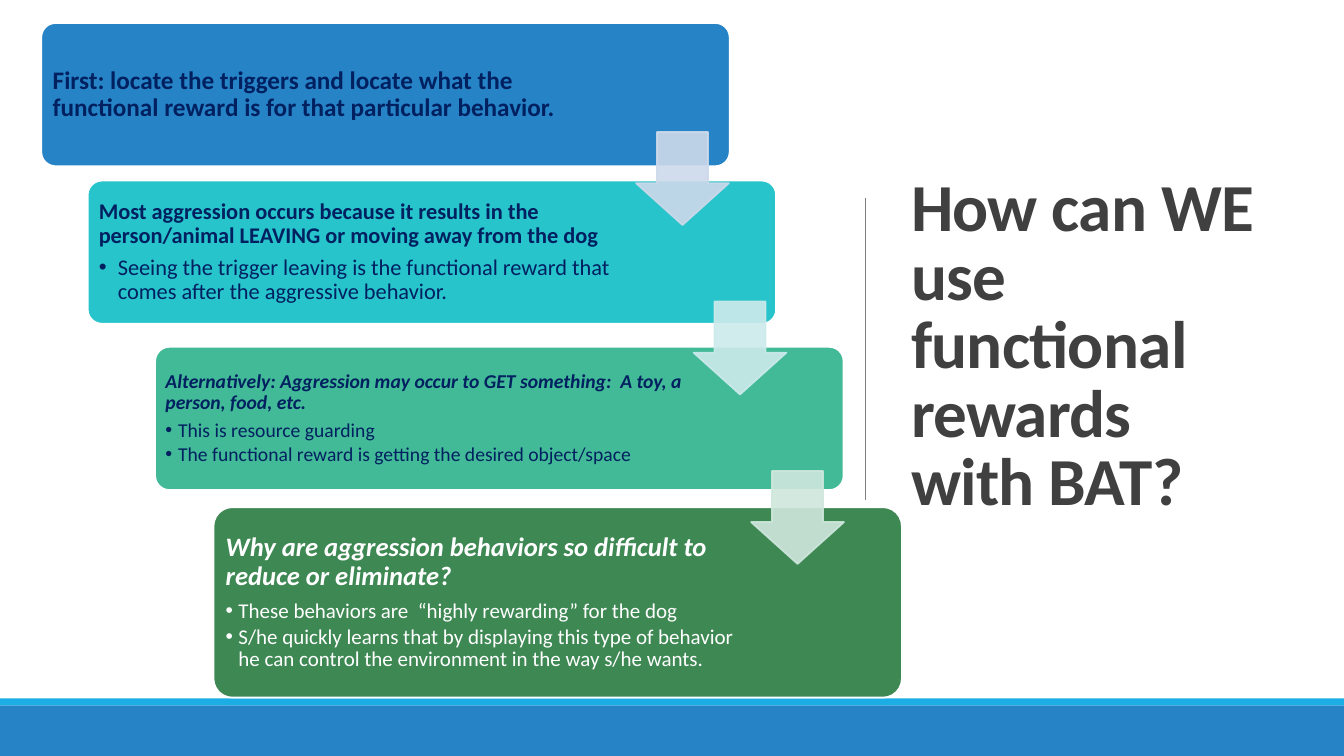
import pptx
import pptx.dml.color
import pptx.enum.shapes
import pptx.enum.text
import pptx.oxml
import pptx.oxml.ns
import pptx.util

Cm, Pt = pptx.util.Cm, pptx.util.Pt
SHAPE = pptx.enum.shapes.MSO_SHAPE
qn = pptx.oxml.ns.qn
NAVY, WHITE = "002060", "FFFFFF"


def rgb(value):
    return pptx.dml.color.RGBColor.from_string(value)


def add_child(parent, tag, **attrs):
    child = parent.makeelement(qn(tag), attrs)
    parent.append(child)
    return child


def para(text, size, color, bold=False, italic=False, spacing=0.9,
         after=0, indent=None, track=None):
    """Describe one paragraph; an indent in cm makes it a bullet."""
    return dict(text=text, size=size, color=color, bold=bold, italic=italic,
                spacing=spacing, after=after, indent=indent, track=track)


class Deck:
    font = "Calibri"

    def __init__(self, width, height):
        self.prs = pptx.Presentation()
        self.prs.slide_width, self.prs.slide_height = Cm(width), Cm(height)
        self.s = self.prs.slides.add_slide(self.prs.slide_layouts[6])

    def shape(self, kind, x, y, w, h, fill, line=None, adj=(), alpha=None):
        sp = self.s.shapes.add_shape(kind, Cm(x), Cm(y), Cm(w), Cm(h))
        sp.shadow.inherit = False
        for i, value in enumerate(adj):
            sp.adjustments[i] = value
        sp.fill.solid()
        sp.fill.fore_color.rgb = rgb(fill)
        if line:
            sp.line.color.rgb = rgb(line)
            sp.line.width = Pt(1.25)
        else:
            sp.line.fill.background()
        if alpha:
            for clr in sp._element.spPr.iter(qn("a:srgbClr")):
                add_child(clr, "a:alpha", val=str(alpha * 1000))
        return sp

    def line(self, x1, y1, x2, y2, color, width):
        cn = self.s.shapes.add_connector(
            pptx.enum.shapes.MSO_CONNECTOR.STRAIGHT,
            Cm(x1), Cm(y1), Cm(x2), Cm(y2))
        cn.line.color.rgb = rgb(color)
        cn.line.width = Pt(width)
        add_child(cn._element.spPr, "a:effectLst")

    def text(self, x, y, w, h, paras, inset):
        tf = self.s.shapes.add_textbox(Cm(x), Cm(y), Cm(w), Cm(h)).text_frame
        tf.word_wrap = True
        tf.vertical_anchor = pptx.enum.text.MSO_ANCHOR.MIDDLE
        tf.margin_left = tf.margin_right = Cm(inset)
        tf.margin_top = tf.margin_bottom = Cm(inset)
        for i, item in enumerate(paras):
            p = tf.add_paragraph() if i else tf.paragraphs[0]
            self.fill_paragraph(p, **item)

    def fill_paragraph(self, p, text, size, color, bold, italic, spacing,
                       after, indent, track):
        p.line_spacing = spacing
        p.space_after = Pt(after)
        if indent:
            pPr = p._p.get_or_add_pPr()
            pPr.set("marL", str(Cm(indent)))
            pPr.set("indent", str(-Cm(indent)))
            add_child(pPr, "a:buFont", typeface="Arial")
            add_child(pPr, "a:buChar", char="•")
        r = p.add_run()
        r.text = text
        r.font.name, r.font.size = self.font, Pt(size)
        r.font.bold, r.font.italic = bold, italic
        r.font.color.rgb = rgb(color)
        if track:
            r._r.get_or_add_rPr().set("spc", str(track))

    def card(self, x, y, h, fill, text_w, inset, heading, bullets):
        self.shape(SHAPE.ROUNDED_RECTANGLE, x, y, 17.35, h, fill, WHITE, [0.1])
        self.text(x + 0.11, y + 0.11, text_w, h - 0.22,
                  [heading, *bullets], inset)


def heading(text, size, color=NAVY, italic=False):
    return para(text, size, color, bold=True, italic=italic,
                after=round(size * 0.35, 1))


def bullet(text, size, indent, color=NAVY):
    return para(text, size, color, after=round(size * 0.15, 1), indent=indent)


def main():
    deck = Deck(33.87, 19.05)

    # Title, divider and footer bands
    deck.text(22.71, 1.75, 9.37, 14.05,
              [para("How can WE use functional rewards with BAT?", 48,
                    "404040", bold=True, spacing=0.85, track=-50)], 0.25)
    deck.line(21.82, 4.98, 21.82, 12.6, "808080", 0.5)
    deck.shape(SHAPE.RECTANGLE, 0, 17.6, 33.87, 0.18, "1CADE4")
    deck.shape(SHAPE.RECTANGLE, 0, 17.78, 33.87, 1.27, "2683C6")

    # Staircase of cards
    deck.card(1.04, 0.58, 3.61, "2683C6", 13.13, 0.18, heading(
        "First: locate the triggers and locate what the functional reward "
        "is for that particular behavior.", 18), [])
    deck.card(2.21, 4.55, 3.61, "28C4CC", 13.34, 0.17, heading(
        "Most aggression occurs because it results in the person/animal "
        "LEAVING or moving away from the dog", 16), [
        bullet("Seeing the trigger leaving is the functional reward that "
               "comes after the aggressive behavior.", 16, 0.48)])
    deck.card(3.91, 8.74, 3.61, "42BA97", 13.36, 0.15, heading(
        "Alternatively: Aggression may occur to GET something:  A toy, a "
        "person, food, etc.", 14, italic=True), [
        bullet("This is resource guarding", 14, 0.32),
        bullet("The functional reward is getting the desired object/space",
               14, 0.32)])
    deck.card(5.38, 12.78, 4.8, "3E8853", 13.3, 0.2, heading(
        "Why are aggression behaviors so difficult to reduce or eliminate?",
        19, WHITE, italic=True), [
        bullet("These behaviors are  “highly rewarding” for the dog",
               15, 0.32, WHITE),
        bullet("S/he quickly learns that by displaying this type of behavior "
               "he can control the environment in the way s/he wants.",
               15, 0.32, WHITE)])

    # Arrows from each card to the next
    for i, color in enumerate(["CDD9EA", "CDEAEC", "CFE7DD"]):
        deck.shape(SHAPE.DOWN_ARROW, 16.03 + 1.45 * i, 3.33 + 4.27 * i,
                   2.34, 2.34, color, color, [0.55, 0.45], alpha=90)

    deck.prs.save("out.pptx")


if __name__ == "__main__":
    main()
